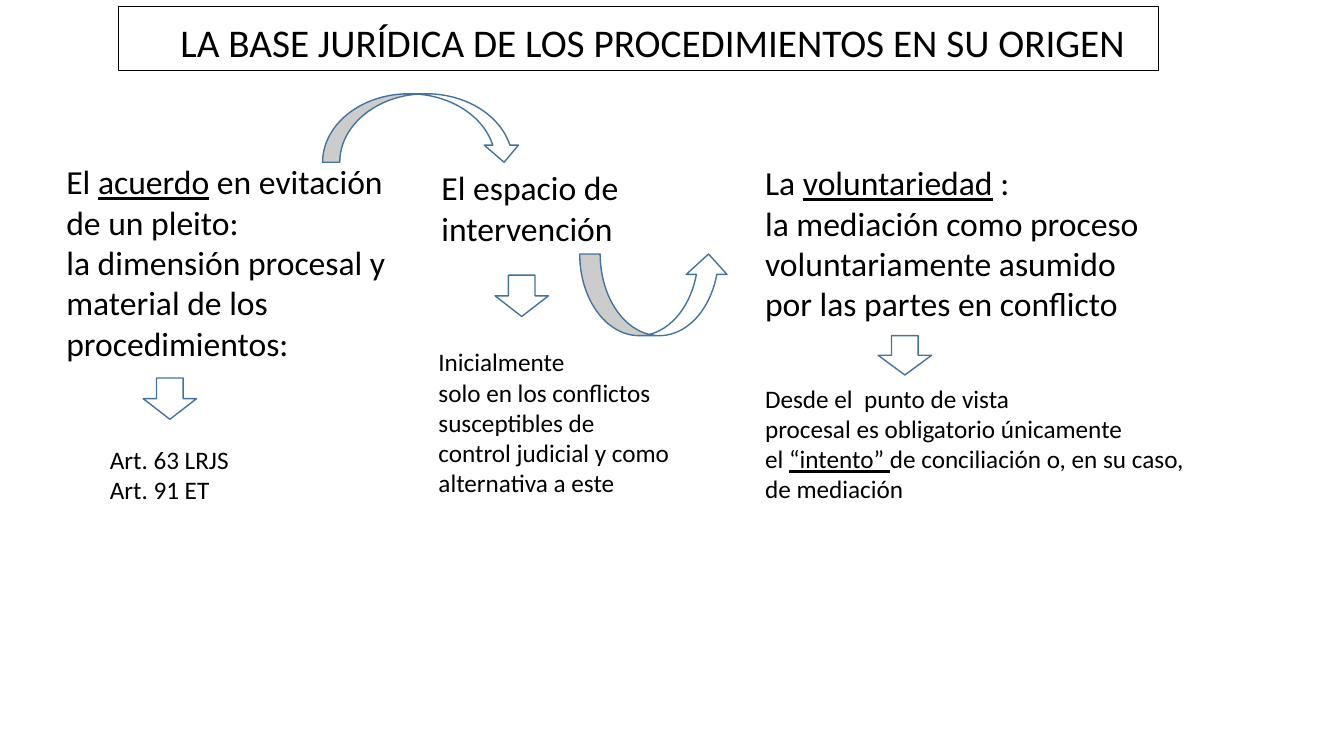
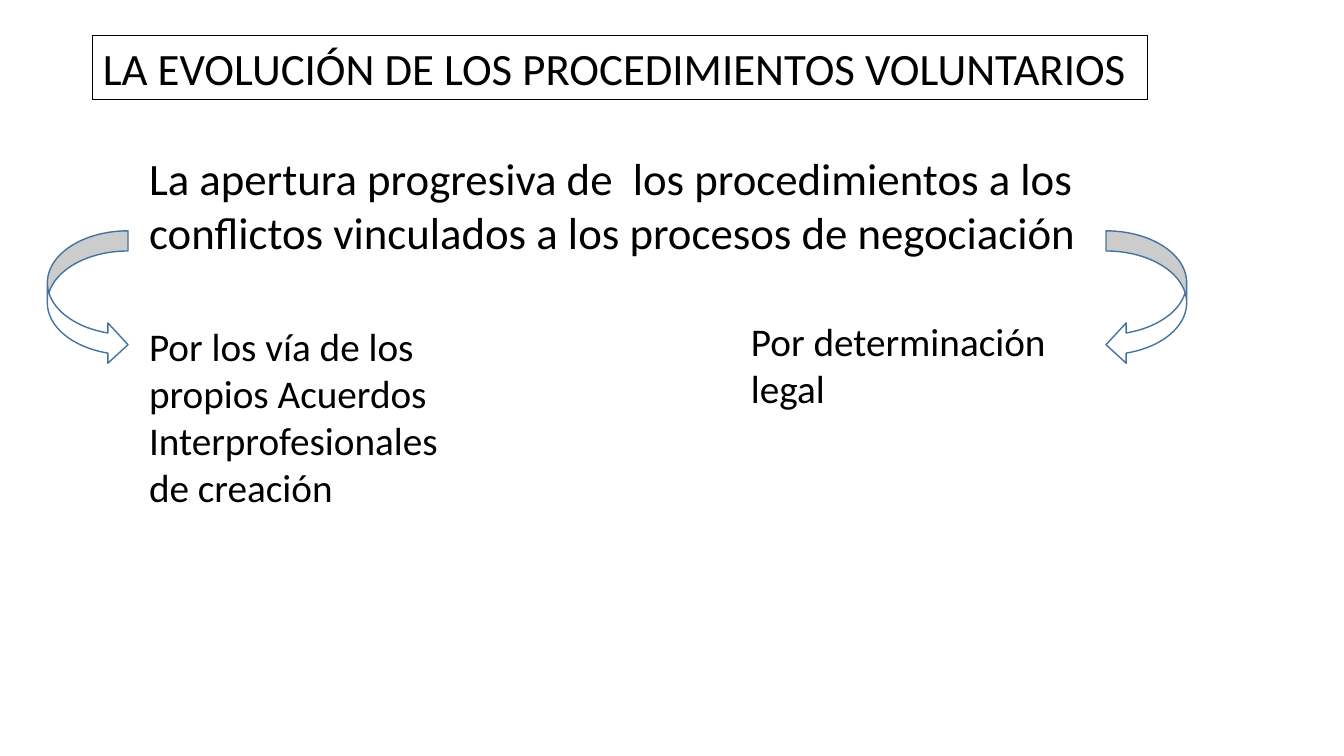
from dataclasses import dataclass

from pptx import Presentation
from pptx.dml.color import RGBColor
from pptx.enum.shapes import MSO_SHAPE as Preset
from pptx.enum.text import MSO_ANCHOR as Anchor, MSO_AUTO_SIZE as AutoSize, PP_ALIGN as Align
from pptx.util import Inches, Pt


@dataclass(frozen=True)
class Theme:
    font: str = "Calibri"
    ink: RGBColor = RGBColor(0, 0, 0)
    paper: RGBColor = RGBColor(255, 255, 255)
    arrow_line: RGBColor = RGBColor(0x43, 0x73, 0x9E)
    title: int = 32
    heading: int = 28
    lead: int = 24
    detail: int = 18


theme = Theme()


def write(frame, lines, size, wrap):
    frame.word_wrap = wrap
    frame.auto_size = AutoSize.NONE
    for index, line in enumerate(lines):
        para = frame.add_paragraph() if index else frame.paragraphs[0]
        para.alignment = Align.LEFT
        para.font.name = theme.font
        para.font.size = Pt(size)
        para.font.color.rgb = theme.ink
        for position, words in enumerate(line.split("_")):
            if words:
                span = para.add_run()
                span.text = words
                if position % 2:
                    span.font.underline = True


pages = [
    {
        "title": ("LA BASE JURÍDICA DE LOS PROCEDIMIENTOS EN SU ORIGEN",
                  theme.heading, 0.61, (1.18, 0.06, 10.31, 0.64)),
        "texts": [
            ((0.56, 1.55, 3.57, 2.12), theme.lead, True,
             ["El _acuerdo_ en evitación de un pleito:",
              "la dimensión procesal y material de los procedimientos:"]),
            ((0.99, 4.36, 1.39, 0.71), theme.detail, False,
             ["Art. 63 LRJS", "Art. 91 ET"]),
            ((4.28, 1.61, 2.05, 0.91), theme.lead, False,
             ["El espacio de", "intervención"]),
            ((4.25, 3.39, 2.52, 1.62), theme.detail, False,
             ["Inicialmente", "solo en los conflictos", "susceptibles de",
              "control judicial y como", "alternativa a este"]),
            ((7.49, 1.56, 3.94, 1.72), theme.lead, False,
             ["La _voluntariedad_ :", "la mediación como proceso",
              "voluntariamente asumido", "por las partes en conflicto"]),
            ((7.49, 3.75, 4.46, 1.31), theme.detail, False,
             ["Desde el  punto de vista", "procesal es obligatorio únicamente",
              "el _“intento” _de conciliación o, en su caso,", "de mediación"]),
        ],
        "arrows": [
            (Preset.DOWN_ARROW, (1.42, 3.75, 0.53, 0.41)),
            (Preset.DOWN_ARROW, (4.91, 2.73, 0.53, 0.41)),
            (Preset.DOWN_ARROW, (8.71, 3.33, 0.53, 0.39)),
            (Preset.CURVED_DOWN_ARROW, (3.2, 0.93, 1.97, 0.68)),
            (Preset.CURVED_UP_ARROW, (5.75, 2.52, 1.48, 0.81)),
        ],
    },
    {
        "title": ("LA EVOLUCIÓN DE LOS PROCEDIMIENTOS VOLUNTARIOS",
                  theme.title, 0.1, (0.92, 0.35, 10.46, 0.64)),
        "texts": [
            ((1.38, 1.45, 9.89, 1.18), theme.title, True,
             ["La apertura progresiva de  los procedimientos a los "
              "conflictos vinculados a los procesos de negociación"]),
            ((1.38, 3.15, 3.09, 1.99), theme.heading, False,
             ["Por los vía de los", "propios Acuerdos",
              "Interprofesionales", "de creación"]),
            ((7.35, 3.1, 3.92, 1.04), theme.heading, True,
             ["Por determinación legal"]),
        ],
        "arrows": [
            (Preset.CURVED_RIGHT_ARROW, (0.47, 2.29, 0.8, 1.33)),
            (Preset.CURVED_LEFT_ARROW, (10.97, 2.29, 0.8, 1.33)),
        ],
    },
]

deck = Presentation()
deck.slide_width = Inches(13.33)
deck.slide_height = Inches(7.5)
title_only = deck.slide_layouts[5]

for content in pages:
    page = deck.slides.add_slide(title_only)

    words, size, indent, area = content["title"]
    title = page.shapes.title
    title.left, title.top, title.width, title.height = map(Inches, area)
    title.line.color.rgb = theme.ink
    title.line.width = Pt(0.75)
    title.text_frame.margin_left = Inches(indent)
    title.text_frame.margin_right = Inches(0.1)
    title.text_frame.vertical_anchor = Anchor.BOTTOM
    write(title.text_frame, [words], size, True)

    for area, size, wrap, lines in content["texts"]:
        box = page.shapes.add_textbox(*map(Inches, area))
        write(box.text_frame, lines, size, wrap)

    for preset, area in content["arrows"]:
        arrow = page.shapes.add_shape(preset, *map(Inches, area))
        arrow.shadow.inherit = False
        arrow.fill.solid()
        arrow.fill.fore_color.rgb = theme.paper
        arrow.line.color.rgb = theme.arrow_line
        arrow.line.width = Pt(1)

deck.save("out.pptx")
